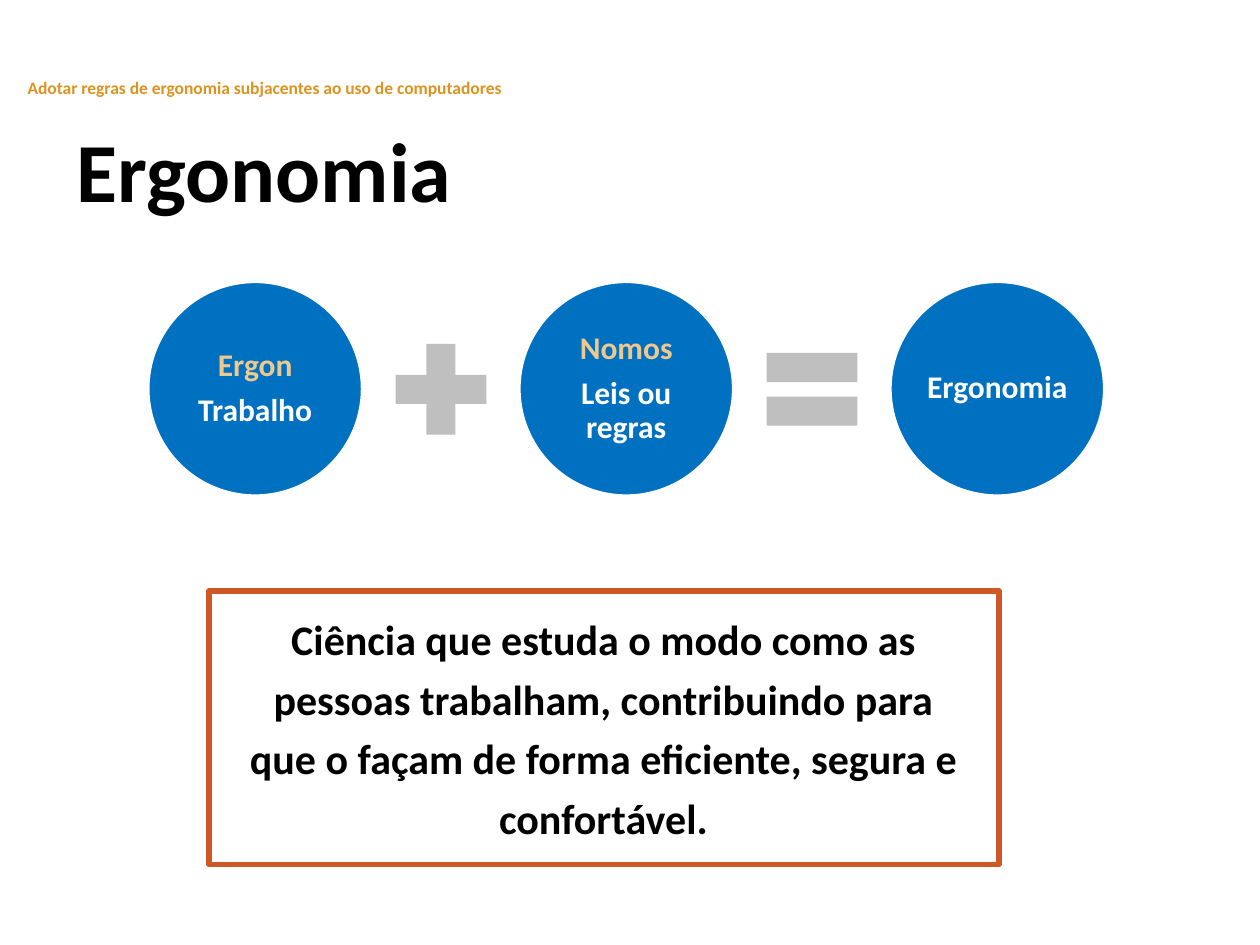
from dataclasses import dataclass
from pptx import Presentation
from pptx.dml.color import RGBColor
from pptx.enum.shapes import MSO_SHAPE
from pptx.enum.text import MSO_ANCHOR, MSO_AUTO_SIZE, PP_ALIGN
from pptx.util import Inches, Pt


@dataclass(frozen=True)
class Theme:
    face: str = "Calibri"
    ink: str = "000000"
    white: str = "FFFFFF"
    gold: str = "DC9320"
    sand: str = "EFC88D"
    blue: str = "0070C0"
    gray: str = "BFBFBF"
    rust: str = "CD5725"
    head: int = 48
    lead: int = 24
    term: int = 18
    note: int = 10


def apply(item, values):
    for name, value in values.items():
        setattr(item, name, value)


class Board:
    cell = 0.1

    def __init__(self, slide, theme):
        self.slide = slide
        self.theme = theme

    def span(self, *cells):
        return [Inches(count * self.cell) for count in cells]

    def label(self, shape, lines, size, para, frame):
        text = shape.text_frame
        apply(text, {"word_wrap": True, "auto_size": MSO_AUTO_SIZE.NONE,
                     "vertical_anchor": MSO_ANCHOR.TOP, **frame})
        for index, (words, color) in enumerate(lines):
            part = text.add_paragraph() if index else text.paragraphs[0]
            apply(part, {"line_spacing": 0.9, "space_before": Pt(6 if index else 0), **para})
            run = part.add_run()
            run.text = words
            apply(run.font, {"name": self.theme.face, "size": Pt(size), "bold": True})
            run.font.color.rgb = RGBColor.from_string(color)

    def title(self, words, *box):
        shape = self.slide.shapes.title
        apply(shape, dict(zip(("left", "top", "width", "height"), self.span(*box))))
        self.label(shape, [(words, self.theme.ink)], self.theme.head,
                   {"alignment": PP_ALIGN.LEFT}, {})

    def note(self, words, *box):
        shape = self.slide.shapes.add_textbox(*self.span(*box))
        self.label(shape, [(words, self.theme.gold)], self.theme.note, {}, {})

    def form(self, kind, box, fill=None, line=None, width=1):
        shape = self.slide.shapes.add_shape(kind, *self.span(*box))
        shape.shadow.inherit = False
        if fill:
            shape.fill.solid()
            shape.fill.fore_color.rgb = RGBColor.from_string(fill)
        else:
            shape.fill.background()
        if line:
            shape.line.color.rgb = RGBColor.from_string(line)
            shape.line.width = Pt(width)
        else:
            shape.line.fill.background()
        return shape

    def disc(self, lines, *box):
        shape = self.form(MSO_SHAPE.OVAL, box, self.theme.blue, self.theme.white)
        sides = ("left", "top", "right", "bottom")
        frame = {f"margin_{side}": Inches(0.03) for side in sides}
        self.label(shape, lines, self.theme.term, {"alignment": PP_ALIGN.CENTER},
                   {"vertical_anchor": MSO_ANCHOR.MIDDLE, **frame})

    def sign(self, kind, *box):
        self.form(kind, box, self.theme.gray)

    def panel(self, words, *box):
        shape = self.form(MSO_SHAPE.RECTANGLE, box, line=self.theme.rust, width=3)
        self.label(shape, [(words, self.theme.ink)], self.theme.lead,
                   {"alignment": PP_ALIGN.CENTER, "line_spacing": Pt(34)},
                   {"margin_left": Inches(0.23), "margin_right": Inches(0.24),
                    "margin_top": Inches(0.11)})


def main():
    deck = Presentation()
    apply(deck, {"slide_width": Inches(10), "slide_height": Inches(7.5)})
    theme = Theme()
    board = Board(deck.slides.add_slide(deck.slide_layouts[5]), theme)

    board.title("Ergonomia", 5.1, 9.8, 71.5, 8.3)
    board.note("Adotar regras de ergonomia subjacentes ao uso de computadores",
               1.2, 5.8, 40.2, 4.2)

    terms = [
        [("Ergon", theme.sand), ("Trabalho", theme.white)],
        [("Nomos", theme.sand), ("Leis ou regras", theme.white)],
        [("Ergonomia", theme.white)],
    ]
    first, step = 11.8, 29.45
    for index, lines in enumerate(terms):
        board.disc(lines, first + index * step, 22.4, 16.9, 16.9)
    for index, kind in enumerate((MSO_SHAPE.MATH_PLUS, MSO_SHAPE.MATH_EQUAL)):
        board.sign(kind, first + 18.3 + index * step, 26, 9.8, 9.8)

    board.panel("Ciência que estuda o modo como as pessoas trabalham, contribuindo "
                "para que o façam de forma eficiente, segura e confortável.",
                16.6, 46.9, 62.7, 21.7)
    deck.save("out.pptx")


if __name__ == "__main__":
    main()
